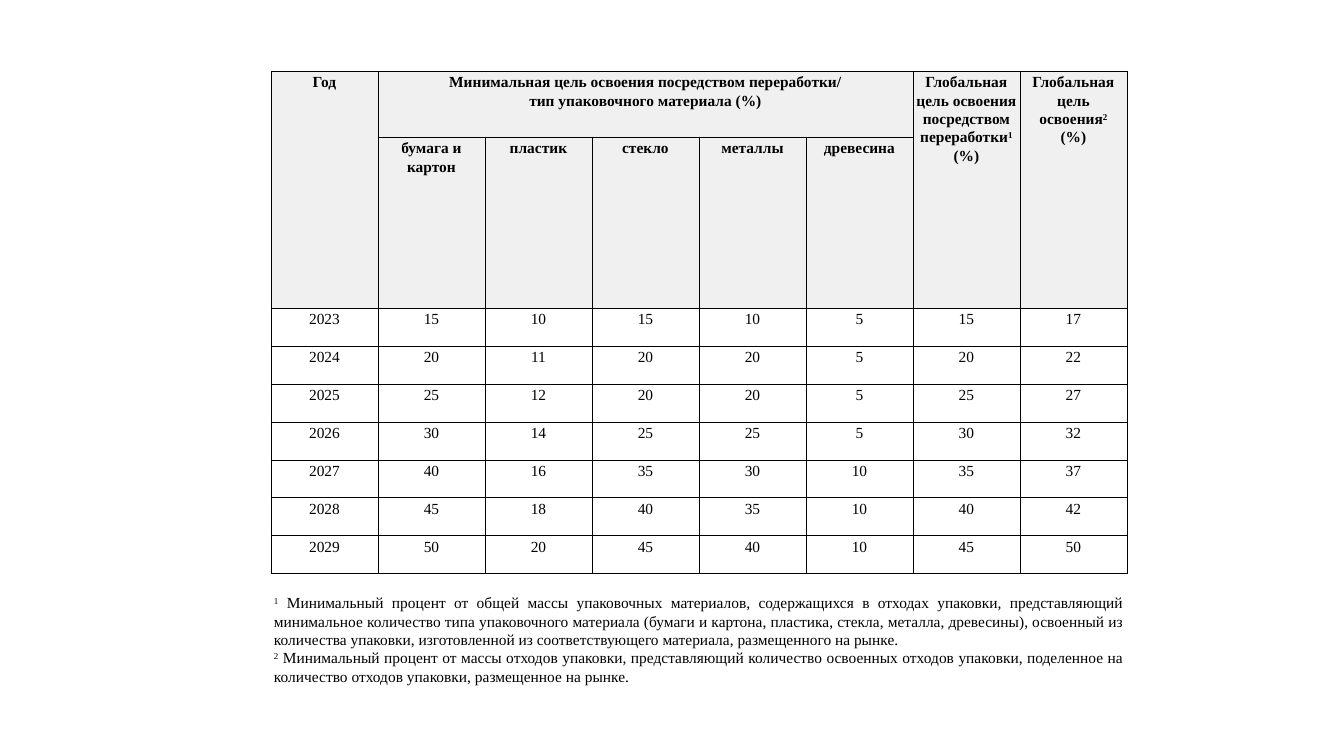
from lxml.etree import SubElement
from pptx import Presentation
from pptx.dml.color import RGBColor
from pptx.enum.text import PP_ALIGN
from pptx.oxml.ns import qn
from pptx.util import Emu, Pt

SCALE = 914400 / 100.8
FONT, BLACK, GREY = "Times New Roman", "000000", "F0F0F0"
COL_W, ROW_H = 107, 38
HEADER_H = [66, 171]
BORDER = Pt(0.6)
GROUP = "Минимальная цель освоения посредством переработки/\nтип упаковочного материала (%)"
RECYCLING = "Глобальная цель освоения\nпосредством переработки^1^\n(%)"
RECOVERY = "Глобальная цель освоения^2^\n(%)"
MATERIALS = ["бумага и картон", "пластик", "стекло", "металлы", "древесина"]
TARGETS = [
    [2023, 15, 10, 15, 10, 5, 15, 17],
    [2024, 20, 11, 20, 20, 5, 20, 22],
    [2025, 25, 12, 20, 20, 5, 25, 27],
    [2026, 30, 14, 25, 25, 5, 30, 32],
    [2027, 40, 16, 35, 30, 10, 35, 37],
    [2028, 45, 18, 40, 35, 10, 40, 42],
    [2029, 50, 20, 45, 40, 10, 45, 50],
]
NOTES = [
    "^1^ Минимальный процент от общей массы упаковочных материалов, содержащихся в отходах "
    "упаковки, представляющий минимальное количество типа упаковочного материала (бумаги и "
    "картона, пластика, стекла, металла, древесины), освоенный из количества упаковки, "
    "изготовленной из соответствующего материала, размещенного на рынке.",
    "^2^ Минимальный процент от массы отходов упаковки, представляющий количество освоенных "
    "отходов упаковки, поделенное на количество отходов упаковки, размещенное на рынке.",
]


def px(n):
    """Turn pixels into EMU."""
    return Emu(round(n * SCALE))


def rgb(color):
    """Turn a hex string into a colour."""
    return RGBColor.from_string(color)


def set_borders(cell, sides):
    """Draw the given sides of a cell in black and hide the others."""
    tcPr = cell._tc.get_or_add_tcPr()
    for side in "LRTB":
        ln = SubElement(tcPr, qn(f"a:ln{side}"), w=str(BORDER))
        if side in sides:
            fill = SubElement(ln, qn("a:solidFill"))
            SubElement(fill, qn("a:srgbClr"), val=BLACK)
        else:
            SubElement(ln, qn("a:noFill"))


def write(p, text, align, bold):
    """Fill a paragraph, raising the parts between carets."""
    p.alignment, p.line_spacing = align, 1.07
    p.font.name, p.font.size, p.font.bold = FONT, Pt(11), bold
    p.font.color.rgb = rgb(BLACK)
    for i, part in enumerate(text.split("^")):
        for j, line in enumerate(part.split("\n")):
            if j:
                p.add_line_break()
            if line:
                r = p.add_run()
                r.text = line
                if i % 2:
                    r.font._element.set("baseline", "30000")


def style_cell(cell, fill=None, sides="LRTB", top=2):
    """Set the margins, borders and fill of a cell."""
    cell.margin_left = cell.margin_right = px(3)
    cell.margin_top, cell.margin_bottom = px(top), px(2)
    set_borders(cell, sides)
    if fill:
        cell.fill.solid()
        cell.fill.fore_color.rgb = rgb(fill)
    else:
        cell.fill.background()


def add_header(table):
    """Build the two merged header rows."""
    for row in range(2):
        for col in range(8):
            style_cell(table.cell(row, col), GREY)
    for col in (0, 6, 7):
        table.cell(0, col).merge(table.cell(1, col))
    table.cell(0, 1).merge(table.cell(0, 5))
    labels = {(0, 0): "Год", (0, 1): GROUP, (0, 6): RECYCLING, (0, 7): RECOVERY}
    labels.update({(1, col): name for col, name in enumerate(MATERIALS, 1)})
    for (row, col), text in labels.items():
        write(table.cell(row, col).text_frame.paragraphs[0], text, PP_ALIGN.CENTER, True)


def add_targets(table):
    """Fill one row for each year."""
    for row, values in enumerate(TARGETS, 2):
        for col, value in enumerate(values):
            cell = table.cell(row, col)
            style_cell(cell)
            write(cell.text_frame.paragraphs[0], str(value), PP_ALIGN.CENTER, False)


def add_notes(table, row):
    """Write the footnotes across the last row."""
    for col in range(8):
        style_cell(table.cell(row, col), sides="T", top=20)
    cell = table.cell(row, 0)
    cell.merge(table.cell(row, 7))
    tf = cell.text_frame
    for i, note in enumerate(NOTES):
        p = tf.add_paragraph() if i else tf.paragraphs[0]
        write(p, note, PP_ALIGN.JUSTIFY, False)


def add_targets_table(slide, left, top, height):
    """Place the table of targets with its footnotes."""
    heights = HEADER_H + [ROW_H] * (len(TARGETS) + 1)
    frame = slide.shapes.add_table(len(heights), 8, px(left), px(top), px(8 * COL_W), px(height))
    table = frame.table
    table.first_row = table.horz_banding = False
    for column in table.columns:
        column.width = px(COL_W)
    for row, h in zip(table.rows, heights):
        row.height = px(h)
    frame.height = px(height)
    add_header(table)
    add_targets(table)
    add_notes(table, len(heights) - 1)


def main():
    """Build and save the slide."""
    prs = Presentation()
    prs.slide_width, prs.slide_height = px(1344), px(756)
    slide = prs.slides.add_slide(prs.slide_layouts[6])
    add_targets_table(slide, 271, 71, 627)
    prs.save("out.pptx")


if __name__ == "__main__":
    main()
